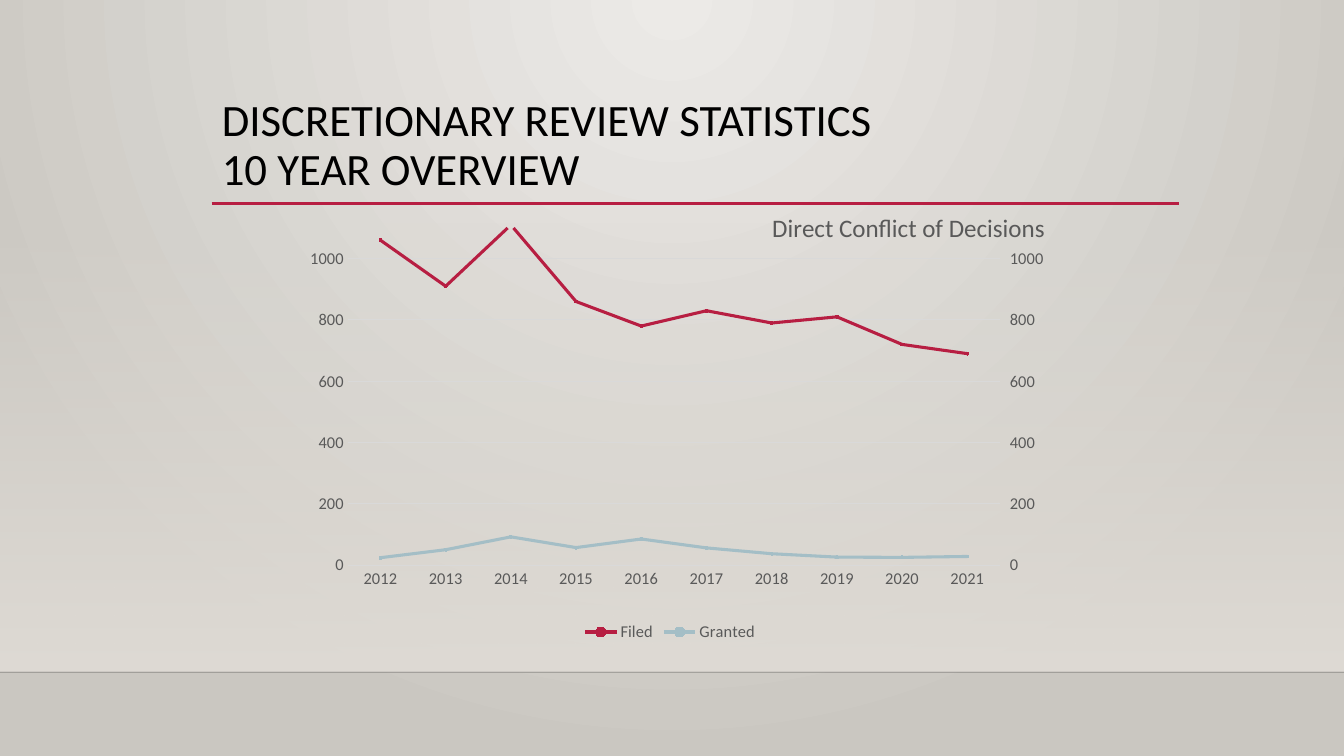
from copy import deepcopy
from dataclasses import dataclass
from typing import Optional

from pptx import Presentation, util as u
from pptx.chart.data import CategoryChartData
from pptx.dml.color import RGBColor
from pptx.enum import chart as ch, shapes, text
from pptx.oxml import parse_xml
from pptx.oxml.ns import nsdecls, qn

FONT = "Calibri"
COLORS = {
    "black": "000000", "grey": "595959", "grid": "D9D9D9",
    "red": "B71E42", "blue": "A4BEC6",
    "bg_light": "ECEAE7", "bg_dark": "CAC7C1", "panel": "DFDBD5", "rule": "000001",
}


@dataclass
class Rule:
    y: float
    left: float
    right: float
    color: str
    width: float
    alpha: Optional[int] = None


@dataclass
class Series:
    name: str
    values: list[int]
    color: str


RULES = [
    Rule(6.67, 0, 13.33, "rule", 1, 20),
    Rule(2.02, 2.1, 11.69, "red", 2.5),
]
YEARS = [str(year) for year in range(2012, 2022)]
SERIES = [
    Series("Filed", [1060, 910, 1110, 860, 780, 830, 790, 810, 720, 690], "red"),
    Series("Granted", [24, 50, 92, 57, 85, 56, 37, 26, 25, 28], "blue"),
]


def rgb(name: str) -> RGBColor:
    return RGBColor.from_string(COLORS[name])


def set_font(font, size: float, color: str) -> None:
    font.name, font.size, font.bold = FONT, u.Pt(size), False
    font.color.rgb = rgb(color)


def gradient(start: str, end: str, direction: str, start_alpha: int = 100):
    return parse_xml(
        f'<a:gradFill {nsdecls("a")} rotWithShape="1"><a:gsLst>'
        f'<a:gs pos="0"><a:srgbClr val="{COLORS[start]}">'
        f'<a:alpha val="{start_alpha * 1000}"/></a:srgbClr></a:gs>'
        f'<a:gs pos="100000"><a:srgbClr val="{COLORS[end]}"/></a:gs>'
        f'</a:gsLst>{direction}</a:gradFill>')


def add_background(s) -> None:
    s.background.fill.solid()
    bg_pr = s.background._cSld.bg.bgPr
    circle = ('<a:path path="circle">'
              '<a:fillToRect l="43000" t="0" r="43000" b="100000"/></a:path>')
    bg_pr.replace(bg_pr[0], gradient("bg_light", "bg_dark", circle))


def add_panel(s) -> None:
    sp = s.shapes.add_shape(shapes.MSO_SHAPE.RECTANGLE, u.Inches(0), u.Inches(2.2),
                            u.Inches(13.33), u.Inches(4.46))
    sp.shadow.inherit = False
    sp.line.fill.background()
    geometry = sp._element.spPr.find(qn("a:prstGeom"))
    geometry.addnext(gradient("panel", "panel", '<a:lin ang="5400000" scaled="0"/>', 0))


def add_rule(s, rule: Rule) -> None:
    y = u.Inches(rule.y)
    line = s.shapes.add_connector(shapes.MSO_CONNECTOR.STRAIGHT, u.Inches(rule.left), y,
                                  u.Inches(rule.right), y)
    line.line.color.rgb = rgb(rule.color)
    line.line.width = u.Pt(rule.width)
    sp_pr = line._element.spPr
    if rule.alpha is not None:
        color = sp_pr.find(".//" + qn("a:srgbClr"))
        color.append(parse_xml(f'<a:alpha {nsdecls("a")} val="{rule.alpha * 1000}"/>'))
    sp_pr.append(parse_xml(f'<a:effectLst {nsdecls("a")}/>'))


def add_title(s) -> None:
    sp = s.shapes.title
    sp.left, sp.top = u.Inches(2.1), u.Inches(0.88)
    sp.width, sp.height = u.Inches(9.58), u.Inches(1.15)
    tf = sp.text_frame
    tf.text = "DISCRETIONARY REVIEW STATISTICS\v10 YEAR OVERVIEW"
    tf.word_wrap = True
    tf.auto_size = text.MSO_AUTO_SIZE.NONE
    tf.vertical_anchor = text.MSO_ANCHOR.MIDDLE
    p = tf.paragraphs[0]
    p.alignment, p.line_spacing = text.PP_ALIGN.LEFT, 0.9
    for r in p.runs:
        set_font(r.font, 32, "black")


def set_layout(parent, position: int, target: str = "", **sizes: float) -> None:
    """Give a chart part a manual layout, as fractions of the chart."""
    for old in parent.findall(qn("c:layout")):
        parent.remove(old)
    inner = f'<c:layoutTarget val="{target}"/>' if target else ""
    inner += '<c:xMode val="edge"/><c:yMode val="edge"/>'
    inner += "".join(f'<c:{key} val="{value}"/>' for key, value in sizes.items())
    parent.insert(position, parse_xml(
        f'<c:layout {nsdecls("c")}><c:manualLayout>{inner}</c:manualLayout></c:layout>'))


def format_axes(chart) -> None:
    cat, val = chart.category_axis, chart.value_axis
    for axis in (cat, val):
        axis.major_tick_mark = axis.minor_tick_mark = ch.XL_TICK_MARK.NONE
        set_font(axis.tick_labels.font, 11.8, "grey")
    val.minimum_scale, val.maximum_scale, val.major_unit = 0, 1100, 200
    val.format.line.fill.background()
    val.has_major_gridlines = True
    for line in (cat.format.line, val.major_gridlines.format.line):
        line.color.rgb, line.width = rgb("grid"), u.Pt(0.75)


def move_last_series_to_right_axis(chart) -> None:
    plot_area = chart._chartSpace.chart.plotArea
    left = plot_area.find(qn("c:lineChart"))
    right = deepcopy(left)
    left.remove(left.findall(qn("c:ser"))[-1])
    right.remove(right.find(qn("c:ser")))
    left.addnext(right)
    cat, val = (deepcopy(plot_area.find(qn(tag))) for tag in ("c:catAx", "c:valAx"))
    plot_area.find(qn("c:valAx")).addnext(val)
    val.addnext(cat)
    ids = ("50010", "50020")
    for ref, new_id in zip(right.findall(qn("c:axId")), ids):
        ref.set("val", new_id)
    for axis, own, other in ((cat, *ids), (val, *ids[::-1])):
        axis.find(qn("c:axId")).set("val", own)
        axis.find(qn("c:crossAx")).set("val", other)
    cat.find(qn("c:delete")).set("val", "1")
    val.remove(val.find(qn("c:majorGridlines")))
    for tag, value in (("axPos", "r"), ("crosses", "max"), ("majorTickMark", "out")):
        val.find(qn(f"c:{tag}")).set("val", value)


def add_chart(s) -> None:
    data = CategoryChartData()
    data.categories = YEARS
    for item in SERIES:
        data.add_series(item.name, item.values)
    chart = s.shapes.add_chart(ch.XL_CHART_TYPE.LINE_MARKERS_STACKED, u.Inches(2.93),
                               u.Inches(1.95), u.Inches(7.48), u.Inches(4.46), data).chart
    set_font(chart.font, 10, "black")

    # Title and legend
    chart.has_title = True
    tf = chart.chart_title.text_frame
    tf.text = "Direct Conflict of Decisions"
    set_font(tf.paragraphs[0].runs[0].font, 18, "grey")
    set_layout(chart.chart_title._element, 1, x=0.63, y=0.02)
    chart.has_legend = True
    chart.legend.position = ch.XL_LEGEND_POSITION.BOTTOM
    chart.legend.include_in_layout = False
    set_font(chart.legend.font, 11.8, "grey")

    # Lines and axes
    chart.plots[0].vary_by_categories = False
    for item, series in zip(SERIES, chart.plots[0].series):
        series.smooth = False
        series.format.line.color.rgb = rgb(item.color)
        series.format.line.width = u.Pt(2.22)
        series.marker.style, series.marker.size = ch.XL_MARKER_STYLE.CIRCLE, 2
        series.marker.format.fill.solid()
        series.marker.format.fill.fore_color.rgb = rgb(item.color)
        series.marker.format.line.color.rgb = rgb(item.color)
    format_axes(chart)
    move_last_series_to_right_axis(chart)
    set_layout(chart._chartSpace.chart.plotArea, 0, "inner", x=0.07, y=0.07, w=0.87, h=0.75)


def main() -> None:
    prs = Presentation()
    prs.slide_width, prs.slide_height = u.Inches(13.33), u.Inches(7.5)
    s = prs.slides.add_slide(prs.slide_layouts[5])
    add_background(s)
    add_panel(s)
    for rule in RULES:
        add_rule(s, rule)
    add_title(s)
    add_chart(s)
    prs.save("out.pptx")


if __name__ == "__main__":
    main()
